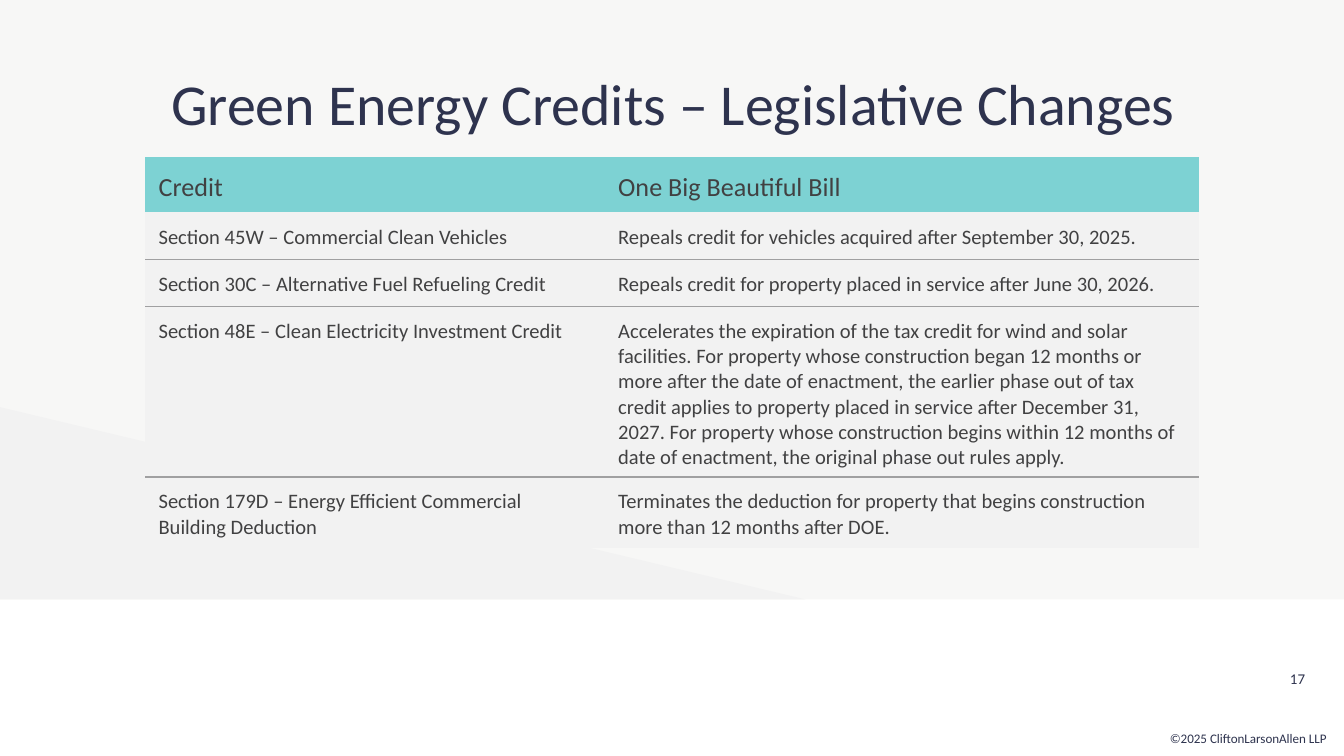
from lxml import etree
from pptx import Presentation
from pptx.dml.color import RGBColor
from pptx.enum import shapes, text
from pptx.oxml import ns
from pptx.util import Inches, Pt

NAVY, GRAY, LIGHT, TEAL, RULE = "2E334E", "414142", "F2F2F2", "7DD2D3", "A0A0A1"
COLUMNS = [3.42, 4.42]
HEIGHTS = [0.41, 0.35, 0.35, 1.27, 0.53]
ROWS = [
    ("Credit", "One Big Beautiful Bill"),
    ("Section 45W – Commercial Clean Vehicles",
     "Repeals credit for vehicles acquired after September 30, 2025."),
    ("Section 30C – Alternative Fuel Refueling Credit",
     "Repeals credit for property placed in service after June 30, 2026."),
    ("Section 48E – Clean Electricity Investment Credit",
     "Accelerates the expiration of the tax credit for wind and solar facilities. "
     "For property whose construction began 12 months or more after the date of "
     "enactment, the earlier phase out of tax credit applies to property placed in "
     "service after December 31, 2027. For property whose construction begins within "
     "12 months of date of enactment, the original phase out rules apply."),
    ("Section 179D – Energy Efficient Commercial Building Deduction",
     "Terminates the deduction for property that begins construction more than "
     "12 months after DOE."),
]


def rgb(color):
    return RGBColor.from_string(color)


def style_runs(p, size, color):
    for r in p.runs:
        r.font.name = "Calibri"
        r.font.size = Pt(size)
        r.font.bold = False
        r.font.color.rgb = rgb(color)


def add_block(s, kind, box, color):
    sp = s.shapes.add_shape(kind, *map(Inches, box))
    sp.shadow.inherit = False
    sp.fill.solid()
    sp.fill.fore_color.rgb = rgb(color)
    sp.line.fill.background()


def add_text(s, box, content, size, align, anchor, spacing=1.0):
    tf = s.shapes.add_textbox(*map(Inches, box)).text_frame
    tf.word_wrap = True
    tf.vertical_anchor = anchor
    tf.text = content
    p = tf.paragraphs[0]
    p.alignment = align
    p.line_spacing = spacing
    style_runs(p, size, NAVY)


def set_borders(cell, ruled):
    tcPr = cell._tc.get_or_add_tcPr()
    for i, side in enumerate("LRTB"):
        ln = etree.Element(ns.qn(f"a:ln{side}"), w=str(Pt(0.75)))
        if side in ruled:
            fill = etree.SubElement(ln, ns.qn("a:solidFill"))
            etree.SubElement(fill, ns.qn("a:srgbClr"), val=RULE)
        else:
            etree.SubElement(ln, ns.qn("a:noFill"))
        tcPr.insert(i, ln)


def fill_cell(cell, content, header, ruled):
    cell.text = content
    cell.margin_left = cell.margin_right = Inches(0.1)
    cell.margin_top, cell.margin_bottom = Inches(0.09), Inches(0.05)
    anchors = text.MSO_ANCHOR
    cell.vertical_anchor = anchors.MIDDLE if header else anchors.TOP
    cell.fill.solid()
    cell.fill.fore_color.rgb = rgb(TEAL if header else LIGHT)
    style_runs(cell.text_frame.paragraphs[0], 14 if header else 11, GRAY)
    set_borders(cell, ruled)


def add_credit_table(s):
    box = map(Inches, (1.08, 1.17, sum(COLUMNS), sum(HEIGHTS)))
    table = s.shapes.add_table(len(ROWS), len(COLUMNS), *box).table
    table.horz_banding = False
    for column, width in zip(table.columns, COLUMNS):
        column.width = Inches(width)
    for i, (height, contents) in enumerate(zip(HEIGHTS, ROWS)):
        table.rows[i].height = Inches(height)
        ruled = ("T" if i > 1 else "") + ("B" if 0 < i < len(ROWS) - 1 else "")
        for j, content in enumerate(contents):
            fill_cell(table.cell(i, j), content, i == 0, ruled)


def main():
    prs = Presentation()
    prs.slide_width = Inches(10)
    prs.slide_height = prs.slide_width * 9 // 16
    s = prs.slides.add_slide(prs.slide_layouts[6])
    kinds, align, anchor = shapes.MSO_SHAPE, text.PP_ALIGN, text.MSO_ANCHOR
    add_block(s, kinds.RECTANGLE, (0, 0, 10, 4.46), "F7F7F6")
    add_block(s, kinds.RIGHT_TRIANGLE, (0, 3.03, 5.99, 1.43), LIGHT)
    add_text(s, (9.38, 4.86, 0.43, 0.38), "17", 8, align.RIGHT, anchor.MIDDLE)
    add_text(s, (8.57, 5.38, 1.42, 0.22), "©2025 CliftonLarsonAllen LLP ", 7,
             align.RIGHT, anchor.MIDDLE)
    add_text(s, (0.85, 0.35, 8.31, 0.73), "Green Energy Credits – Legislative Changes",
             31, align.CENTER, anchor.BOTTOM, 0.9)
    add_credit_table(s)
    prs.save("out.pptx")


if __name__ == "__main__":
    main()
